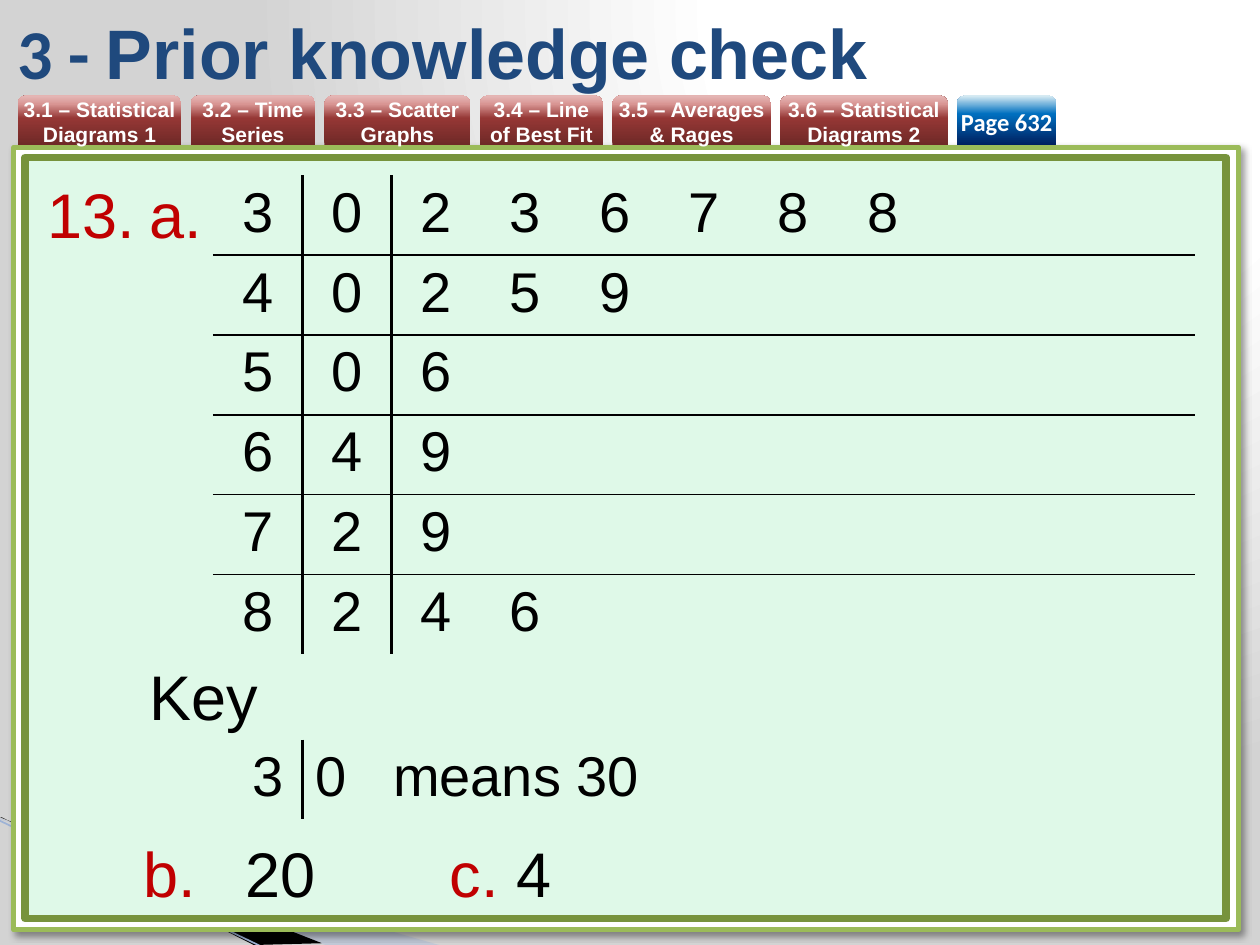
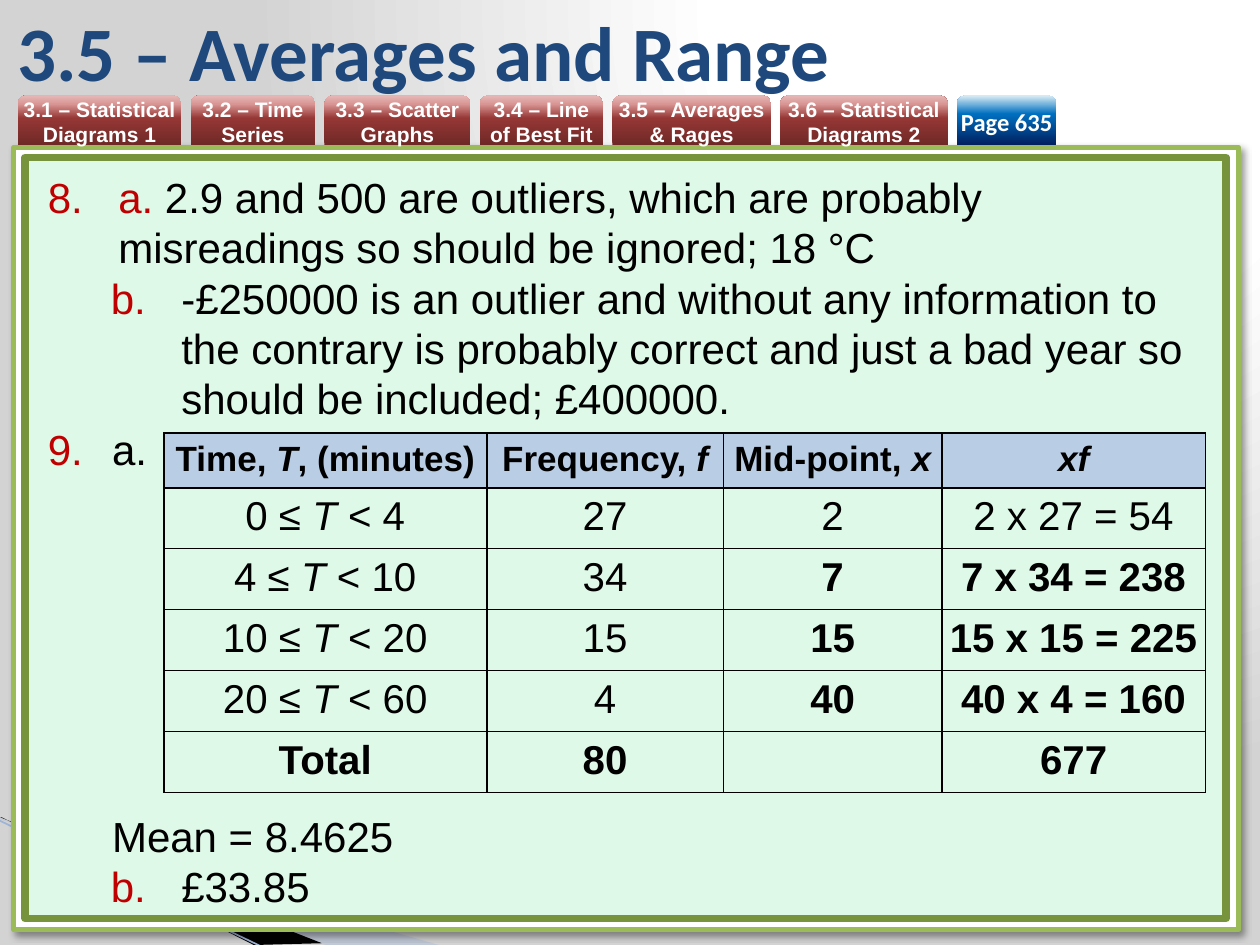
from pptx import Presentation
from pptx.dml.color import RGBColor
from pptx.enum.shapes import MSO_CONNECTOR, MSO_SHAPE
from pptx.enum.text import MSO_ANCHOR, PP_ALIGN
from pptx.oxml import parse_xml
from pptx.oxml.ns import nsdecls, qn
from pptx.util import Pt

RECT = MSO_SHAPE.RECTANGLE
TAB = MSO_SHAPE.ROUND_2_SAME_RECTANGLE
LINE = MSO_CONNECTOR.STRAIGHT
MIDDLE = MSO_ANCHOR.MIDDLE
CENTER = PP_ALIGN.CENTER
LEFT = PP_ALIGN.LEFT
hue = RGBColor.from_string

RED = "C00000"
NAVY = "1F497D"
WHITE = "FFFFFF"
PLAIN = "{2D5ABB26-0587-4C30-8999-92F81FD0307C}"  # table style without grid
MAROON = [(0, "6F2927"), (54, "953735"), (83, "D99694"), (100, "E6B9B8")]
BLUE = [(0, "002060"), (63, "0070C0"), (100, "DBEEF4")]
GREY = [(0, WHITE), (40, WHITE), (100, "D3D3D3")]


def write(para, text, size, color="000000", font="Arial", bold=False,
          italic=False, accent=None):
    """Add runs; parts between asterisks take the accent's overrides."""
    base = dict(size=size, color=color, font=font, bold=bold, italic=italic)
    for i, part in enumerate(text.split("*")):
        if not part:
            continue
        look = base | (accent or {}) if i % 2 else base
        run = para.add_run()
        run.text = part
        run.font.size = Pt(look["size"])
        run.font.color.rgb = hue(look["color"])
        run.font.name = look["font"]
        run.font.bold = look["bold"]
        run.font.italic = look["italic"]


def graft(parent, markup, stops=(), old=None):
    """Append drawing markup to parent, or put it in place of old.

    Gradient stops fill the {stops} slot of the markup.
    """
    marks = "".join(f'<a:gs pos="{pos * 1000}"><a:srgbClr val="{color}"/></a:gs>'
                    for pos, color in stops)
    markup = markup.replace("{stops}", f"<a:gsLst>{marks}</a:gsLst>")
    for part in list(parse_xml(f"<a:root {nsdecls('a')}>{markup}</a:root>")):
        if old is None:
            parent.append(part)
        else:
            parent.replace(old, part)


# Tabs: label, width
tabs = [("3.1 – Statistical Diagrams 1", 93.6), ("3.2 – Time Series", 71.3),
        ("3.3 – Scatter Graphs", 83.5), ("3.4 – Line of Best Fit", 70.6),
        ("3.5 – Averages & Rages", 90.7), ("3.6 – Statistical Diagrams 2", 95.8)]
TAB_GAP = 5.2

# Cards: left, top, width, height, fill, edge, edge width
cards = [(7.9, 84.2, 699.8, 447.1, WHITE, "9BBB59", 3),
         (14.4, 90, 686.2, 434.9, "DFF9E8", "77933C", 4.33)]

# Corner wedges: fill, opacity, points
wedges = [("A7B9DB", 40, [(-0.7, 468), (251.3, 540), (186.5, 540), (-0.7, 467.3)]),
          ("000000", 100, [(0, 466.6), (184.3, 539.3), (145.4, 540), (0.7, 467.3)])]

stems = ["3 0 2 3 6 7 8 8", "4 0 2 5 9", "5 0 6", "6 4 9", "7 2 9", "8 2 4 6"]
times = [["Time, *T*, (minutes)", "Frequency, *f*", "Mid-point, *x*", "*xf*"],
         ["0 ≤ *T* < 4", "27", "2", "2 x 27 = 54"],
         ["4 ≤ *T* < 10", "34", "7", "7 x 34 = 238"],
         ["10 ≤ *T* < 20", "15", "15", "15 x 15 = 225"],
         ["20 ≤ *T* < 60", "4", "40", "40 x 4 = 160"],
         ["Total", "80", "", "677"]]

# Body lines: level, number style, start, indent, hang, space before, text
# Grids: left, top, column widths, row heights, cells, is stem plot
pages = [
    dict(title="*3 - *Prior knowledge check", big=40, page="Page 632",
         size=36, pitch=41.4, inset=7.6, width=674.6,
         body=[(0, "arabicPeriod", 13, 58.3, 58.3, 0, "*a.*"),
               (0, None, 0, 58.3, 0, 234, "Key"),
               (1, "alphaLcPeriod", 2, 113, 58.3, 59.7, "20\t*c.* 4")],
         grids=[(121.7, 100.1, [51.05] * 11, [45.6] * 6,
                 [row.split() for row in stems], True),
                (133.9, 422.6, [38.9, 232.6], [45.4],
                 [["3", "0\tmeans 30"]], True)]),
    dict(title="*3.5 – Averages and Range*", big=44, page="Page 635",
         size=24, pitch=28.8, inset=3.6, width=668.9,
         body=[(0, "arabicPeriod", 8, 40.3, 40.3, 0,
                "*a. *2.9 and 500 are outliers, which are probably "
                "misreadings so should be ignored; 18 °C"),
               (1, "alphaLcPeriod", 2, 76.3, 40.3, 0,
                "-£250000 is an outlier and without any information to the "
                "contrary is probably correct and just a bad year so should "
                "be included; £400000."),
               (0, "arabicPeriod", 8, 36.7, 36.7, 0, "a."),
               (0, None, 0, 36.7, 0, 192.3, "Mean = 8.4625"),
               (1, "alphaLcPeriod", 2, 76.3, 40.3, 0, "£33.85")],
         grids=[(93.6, 247.5, [184.6, 135.2, 124.9, 150.5],
                 [31.2] + [34.8] * 5, times, False)]),
]

prs = Presentation()
prs.slide_width, prs.slide_height = Pt(720), Pt(540)

# Shared background
master = prs.slide_master
master.background.fill.solid()
back = master._element.find(".//" + qn("p:bgPr"))
graft(back, '<a:gradFill rotWithShape="1">{stops}<a:path path="circle">'
      '<a:fillToRect l="65000" t="0" r="0" b="98000"/></a:path></a:gradFill>',
      GREY, back[0])

for page in pages:
    slide = prs.slides.add_slide(prs.slide_layouts[6])
    shapes = slide.shapes

    # Corner decoration
    for color, alpha, points in wedges:
        pen = shapes.build_freeform(*points[0], scale=12700)
        pen.add_line_segments(points[1:])
        wedge = pen.convert_to_shape()
        wedge.shadow.inherit = False
        wedge.fill.solid()
        wedge.fill.fore_color.rgb = hue(color)
        wedge.line.fill.background()
        tint = wedge._element.spPr.find(qn("a:solidFill"))[0]
        graft(tint, f'<a:alpha val="{alpha * 1000}"/>')
    streak = shapes.add_connector(LINE, Pt(-0.7), Pt(468.7), Pt(150.5), Pt(541.4))
    streak.line.color.rgb = hue("9EB3D6")
    streak.line.width = Pt(0.95)
    graft(streak._element.spPr, "<a:effectLst/>")

    # Framed card
    for left, top, width, height, fill, edge, weight in cards:
        card = shapes.add_shape(RECT, Pt(left), Pt(top), Pt(width), Pt(height))
        card.shadow.inherit = False
        card.fill.solid()
        card.fill.fore_color.rgb = hue(fill)
        card.line.color.rgb = hue(edge)
        card.line.width = Pt(weight)
        if fill == WHITE:
            graft(card._element.spPr.find(qn("a:effectLst")),
                  '<a:outerShdw blurRad="50800" dist="38100" dir="2700000">'
                  '<a:srgbClr val="000000"><a:alpha val="40000"/></a:srgbClr>'
                  '</a:outerShdw>')

    # Tab strip, with the page number last
    left = 10.1
    for label, width in tabs + [(page["page"], 56.9)]:
        last = label == page["page"]
        tab = shapes.add_shape(TAB, Pt(left), Pt(54.6), Pt(width), Pt(28.2))
        tab.shadow.inherit = False
        tab.line.fill.background()
        tab.fill.background()
        props = tab._element.spPr
        graft(props, '<a:gradFill rotWithShape="1">{stops}'
              '<a:lin ang="16200000" scaled="0"/></a:gradFill>',
              BLUE if last else MAROON, props.find(qn("a:noFill")))
        frame = tab.text_frame
        frame.word_wrap = True
        frame.vertical_anchor = MIDDLE
        frame.margin_left = frame.margin_right = 0
        frame.margin_top = frame.margin_bottom = 0
        frame.paragraphs[0].alignment = CENTER
        write(frame.paragraphs[0], label, 14 if last else 12, color=WHITE,
              font="Calibri" if last else "Arial", bold=True)
        left += width + TAB_GAP

    # Title
    frame = shapes.add_textbox(Pt(2.9), Pt(3.6), Pt(607), Pt(51.1)).text_frame
    frame.word_wrap = True
    frame.vertical_anchor = MIDDLE
    write(frame.paragraphs[0], page["title"], page["big"], color=NAVY,
          bold=True, accent={"font": "Calibri"})

    # Answers
    frame = shapes.add_textbox(Pt(20.2), Pt(94.3), Pt(page["width"]),
                               Pt(430)).text_frame
    frame.word_wrap = True
    frame.margin_top = Pt(page["inset"])
    for i, (level, style, start, indent, hang, space, text) in enumerate(page["body"]):
        para = frame.add_paragraph() if i else frame.paragraphs[0]
        para.level = level
        props = para._p.get_or_add_pPr()
        props.set("marL", str(Pt(indent)))
        props.set("indent", str(-Pt(hang)))
        if style:
            graft(props, f'<a:buClr><a:srgbClr val="{RED}"/></a:buClr>'
                  '<a:buFont typeface="Arial"/>'
                  f'<a:buAutoNum type="{style}" startAt="{start}"/>')
        else:
            graft(props, "<a:buNone/>")
        if "\t" in text:
            graft(props, f'<a:tabLst><a:tab pos="{Pt(229.7)}" algn="l"/></a:tabLst>')
        para.line_spacing = Pt(page["pitch"])
        if space:
            para.space_before = Pt(space)
        write(para, text, page["size"], accent={"color": RED})

    # Tables
    for left, top, cols, rows, cells, stem in page["grids"]:
        table = shapes.add_table(len(rows), len(cols), Pt(left), Pt(top),
                                 Pt(sum(cols)), Pt(sum(rows))).table
        table.first_row = table.horz_banding = False
        table._tbl.tblPr.find(qn("a:tableStyleId")).text = PLAIN
        for col, width in zip(table.columns, cols):
            col.width = Pt(width)
        for r, height in enumerate(rows):
            table.rows[r].height = Pt(height)
            for c in range(len(cols)):
                cell = table.cell(r, c)
                if stem:
                    edges = {"L": 2.25 * (c == 1), "R": 2.25 * (c == 0),
                             "T": r > 0, "B": r < len(rows) - 1}
                else:
                    edges = dict.fromkeys("LRTB", 1)
                    cell.margin_left = cell.margin_right = Pt(3.6)
                    cell.margin_top = cell.margin_bottom = Pt(3.6)
                props = cell._tc.get_or_add_tcPr()
                for side, weight in edges.items():
                    if weight:
                        graft(props, f'<a:ln{side} w="{Pt(weight)}"><a:solidFill>'
                              f'<a:srgbClr val="000000"/></a:solidFill></a:ln{side}>')
                head = r == 0 and not stem
                if head:
                    cell.fill.solid()
                    cell.fill.fore_color.rgb = hue("B9CDE5")
                else:
                    cell.fill.background()
                if c >= len(cells[r]) or not cells[r][c]:
                    continue
                text = cells[r][c]
                para = cell.text_frame.paragraphs[0]
                para.alignment = CENTER
                if "\t" in text:
                    para.alignment = LEFT
                    graft(para._p.get_or_add_pPr(),
                          f'<a:tabLst><a:tab pos="{Pt(44.6)}" algn="l"/></a:tabLst>')
                total = r == len(rows) - 1
                bold = not stem and (head or total or (r > 1 and c > 1))
                write(para, text, 32 if stem else 20 if head else 23,
                      bold=bold, accent={"italic": True})

prs.save("out.pptx")
